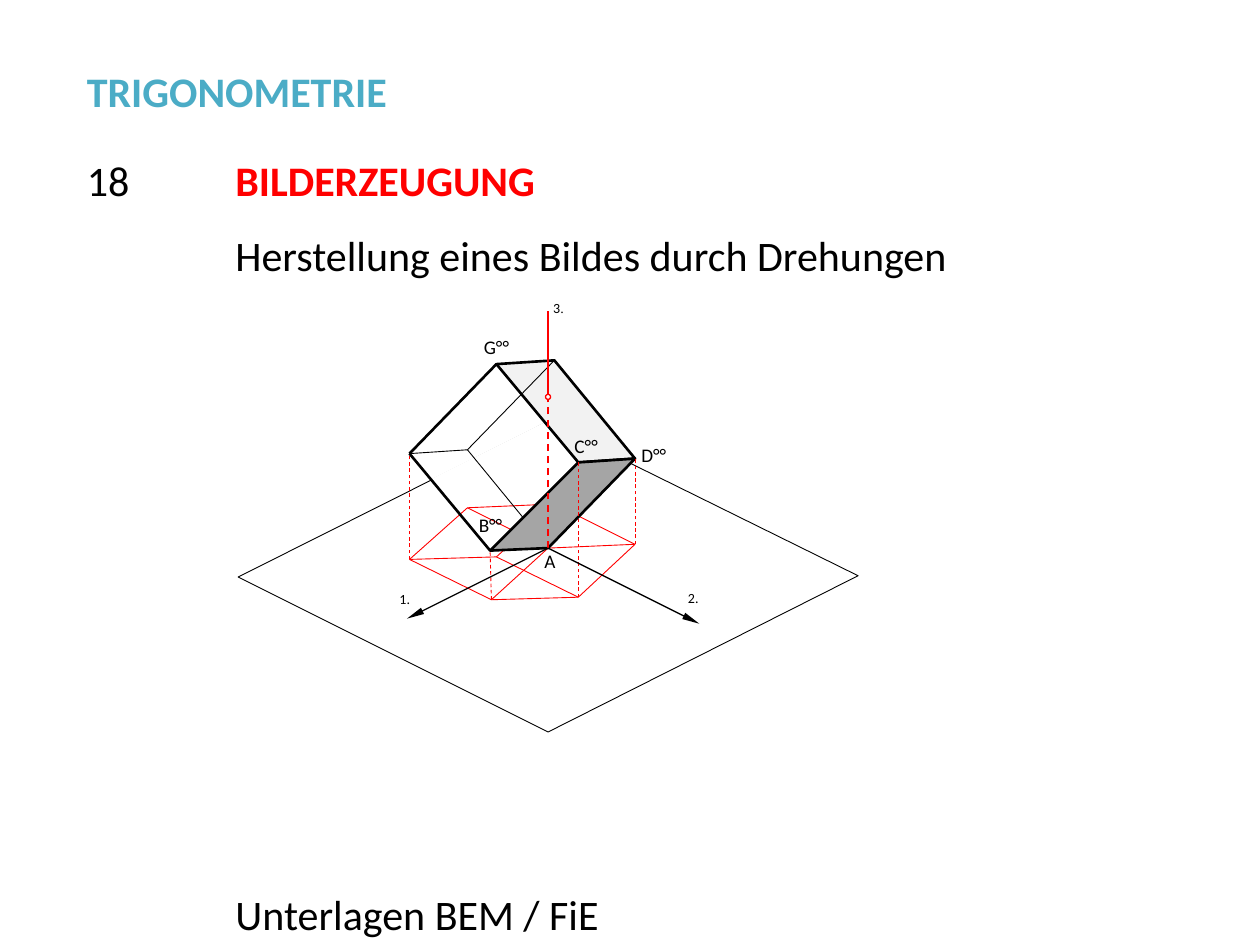
"""Build the slide on making an image of a cube by rotations."""
import pptx
import pptx.dml.color
import pptx.enum.dml
import pptx.enum.shapes
import pptx.enum.text
import pptx.oxml
import pptx.oxml.ns
import pptx.util

PX = 9144
BLACK = pptx.dml.color.RGBColor(0x00, 0x00, 0x00)
WHITE = pptx.dml.color.RGBColor(0xFF, 0xFF, 0xFF)
RED = pptx.dml.color.RGBColor(0xFF, 0x00, 0x00)
TEAL = pptx.dml.color.RGBColor(0x4B, 0xAC, 0xC6)
LIGHT_GREY = pptx.dml.color.RGBColor(0xF2, 0xF2, 0xF2)
MID_GREY = pptx.dml.color.RGBColor(0xA5, 0xA5, 0xA5)

ORIGIN = (435, 435)
GROUND = {"A": ORIGIN, "B": (390, 476), "C": (459, 474), "D": (504, 432),
          "E": (371, 403), "F": (325, 444), "G": (394, 442), "H": (440, 400)}
CUBE = {"A": ORIGIN, "B": (389, 437), "C": (459, 367), "D": (504, 364),
        "E": (371, 357), "F": (325, 360), "G": (394, 289), "H": (440, 286)}
GROUND_EDGES = ["AD", "AE", "AB", "EF", "DC", "DH", "BF", "CG", "EH", "BC", "FG", "HG"]
CUBE_EDGES = [("AD", 0.75), ("AE", 0.5), ("AB", 0.75), ("DC", 0.75), ("EF", 0.5),
              ("EH", 0.5), ("FG", 1.5), ("BC", 0.75), ("BF", 1.5)]
PLANE = [(434, 335), (681, 457), (435, 581), (189, 458)]
HIDDEN_BORDER = [(343, 381), (435, 335), (501, 368)]

HEADINGS = [
    ("18", (59, 118, 102, 50), BLACK, False),
    ("TRIGONOMETRIE", (59, 47, 441, 50), TEAL, True),
    ("BILDERZEUGUNG", (177, 118, 690, 50), RED, True),
    ("Unterlagen BEM / FiE", (177, 700, 648, 50), BLACK, False),
    ("Herstellung eines Bildes durch Drehungen", (177, 177, 690, 50), BLACK, False),
]
BACK_LABELS = [
    ([("B°°", "Calibri")], (380, 407, 30, 27), 11),
    ([("G°°", "Calibri")], (384, 266, 39, 27), 11),
]
FRONT_LABELS = [
    ([("C°°", "Calibri")], (456, 345, 40, 27), 11),
    ([("D°°", "Calibri")], (509, 352, 31, 27), 11),
    ([("A", "Calibri")], (432, 436, 17, 20), 11),
    ([("2.", "Calibri")], (546, 468, 18, 27), 8),
    ([("1.", "Calibri")], (317, 469, 18, 27), 8),
    ([("3", "Calibri"), (".", "Times New Roman")], (439, 238, 18, 27), 8),
]


def emu(*lengths):
    """Turn px lengths into EMU."""
    return [length * PX for length in lengths]


def add_run(paragraph, text, size, font="Calibri", color=BLACK, bold=False):
    """Add one formatted run to a paragraph."""
    run = paragraph.add_run()
    run.text = text
    run.font.name = font
    run.font.size = pptx.util.Pt(size)
    run.font.bold = bold
    run.font.color.rgb = color


def add_heading(shapes, text, box, color, bold):
    """Add a large text box that grows with its text."""
    frame = shapes.add_textbox(*emu(*box)).text_frame
    frame.word_wrap = True
    frame.auto_size = pptx.enum.text.MSO_AUTO_SIZE.SHAPE_TO_FIT_TEXT
    add_run(frame.paragraphs[0], text, 24, color=color, bold=bold)


def add_label(shapes, runs, box, size):
    """Add a small label without insets."""
    frame = shapes.add_textbox(*emu(*box)).text_frame
    frame.word_wrap = True
    frame.margin_left = frame.margin_top = frame.margin_right = frame.margin_bottom = 0
    paragraph = frame.paragraphs[0]
    paragraph.space_after = pptx.util.Pt(10)
    for text, font in runs:
        add_run(paragraph, text, size, font)


def style_line(line, color, width):
    """Set the colour and width of a line."""
    line.color.rgb = color
    line.width = pptx.util.Pt(width)


def add_line(shapes, start, end, color, width, dashed=False, arrow=False):
    """Add a straight line, dashed or with an arrowhead if asked."""
    connector = shapes.add_connector(
        pptx.enum.shapes.MSO_CONNECTOR.STRAIGHT, *emu(*start, *end))
    style_line(connector.line, color, width)
    if dashed:
        connector.line.dash_style = pptx.enum.dml.MSO_LINE.DASH
    if arrow:
        head = pptx.oxml.parse_xml(
            f'<a:tailEnd {pptx.oxml.ns.nsdecls("a")} type="triangle" w="sm" len="lg"/>')
        connector.line._get_or_add_ln().append(head)
    connector._element.spPr.append(
        pptx.oxml.parse_xml(f'<a:effectLst {pptx.oxml.ns.nsdecls("a")}/>'))


def add_outline(shapes, points, color, width, fill=None, close=True):
    """Add a polygon or an open polyline."""
    builder = shapes.build_freeform(*points[0], scale=PX)
    builder.add_line_segments(points[1:], close=close)
    shape = builder.convert_to_shape()
    shape.shadow.inherit = False
    style_line(shape.line, color, width)
    if fill is None:
        shape.fill.background()
    else:
        shape.fill.solid()
        shape.fill.fore_color.rgb = fill


def add_ring(shapes, box):
    """Add the small ring where the third axis leaves the cube."""
    ring = shapes.add_shape(pptx.enum.shapes.MSO_SHAPE.OVAL, *emu(*box))
    ring.shadow.inherit = False
    ring.fill.solid()
    ring.fill.fore_color.rgb = WHITE
    style_line(ring.line, RED, 0.75)


def add_ground(shapes):
    """Add the projected cube and the ground plane."""
    for start, end in GROUND_EDGES:
        add_line(shapes, GROUND[start], GROUND[end], RED, 0.5)
    for label in BACK_LABELS:
        add_label(shapes, *label)
    add_outline(shapes, PLANE, BLACK, 0.5)
    add_outline(shapes, HIDDEN_BORDER, WHITE, 1.5, close=False)


def add_cube(shapes):
    """Add the tilted cube with its two shaded faces."""
    add_outline(shapes, [CUBE[name] for name in "CDHG"], BLACK, 1.5, LIGHT_GREY)
    for (start, end), width in CUBE_EDGES:
        add_line(shapes, CUBE[start], CUBE[end], BLACK, width)
    add_outline(shapes, [CUBE[name] for name in "ADCB"], BLACK, 1.5, MID_GREY)
    for name in "DCBF":
        add_line(shapes, GROUND[name], CUBE[name], RED, 0.5, dashed=True)


def add_axes(shapes):
    """Add the three rotation axes."""
    add_line(shapes, (435, 313), (435, 247), RED, 1.5)
    add_line(shapes, ORIGIN, (435, 315), RED, 1, dashed=True)
    for tip in [(323, 491), (555, 495)]:
        add_line(shapes, ORIGIN, tip, BLACK, 0.75, arrow=True)
    add_ring(shapes, (433, 313, 4, 4))


def main():
    """Build and save the slide."""
    presentation = pptx.Presentation()
    presentation.slide_width, presentation.slide_height = emu(1000, 750)
    slide = presentation.slides.add_slide(presentation.slide_layouts[6])
    for heading in HEADINGS:
        add_heading(slide.shapes, *heading)
    drawing = slide.shapes.add_group_shape().shapes
    add_ground(drawing)
    add_cube(drawing)
    add_axes(drawing)
    for label in FRONT_LABELS:
        add_label(drawing, *label)
    presentation.save("out.pptx")


if __name__ == "__main__":
    main()
